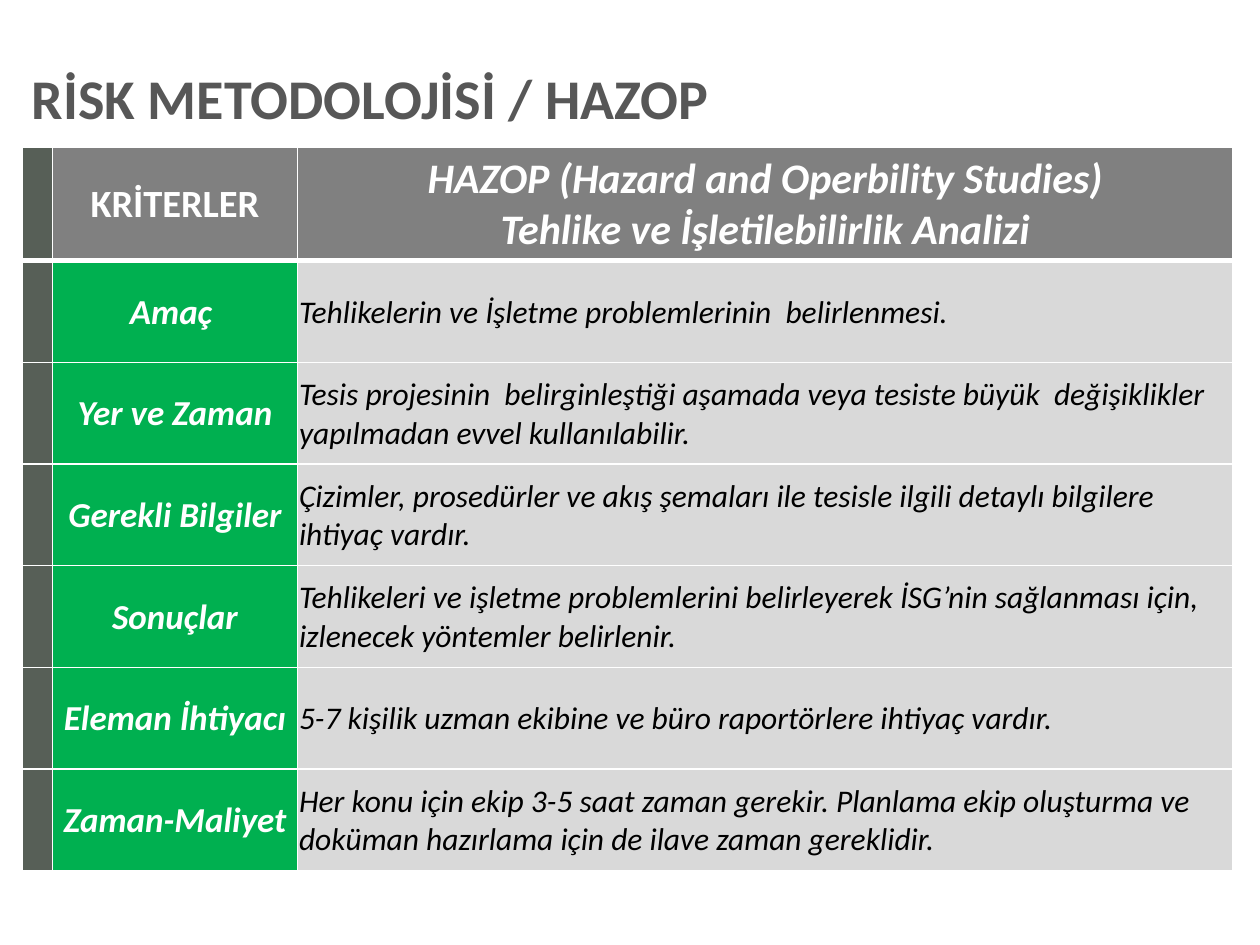
"""Build the HAZOP risk methodology slide with its criteria table."""
import lxml.etree
import pptx
import pptx.dml.color
import pptx.enum.text
import pptx.oxml.ns
import pptx.util

Cm = pptx.util.Cm
ALIGN = pptx.enum.text.PP_ALIGN
MIDDLE = pptx.enum.text.MSO_ANCHOR.MIDDLE
GRAY, WHITE, BLACK = "575757", "FFFFFF", "000000"


def color(hex_string):
    return pptx.dml.color.RGBColor.from_string(hex_string)


def add_run(paragraph, text, size, hex_string, bold=True, italic=False):
    run = paragraph.add_run()
    run.text = text
    run.font.name = "Calibri"
    run.font.size = pptx.util.Pt(size)
    run.font.bold = bold
    run.font.italic = italic
    run.font.color.rgb = color(hex_string)


presentation = pptx.Presentation()
presentation.slide_width = Cm(25.4)
presentation.slide_height = Cm(19.05)
slide = presentation.slides.add_slide(presentation.slide_layouts[6])

title = slide.shapes.add_textbox(Cm(0.64), Cm(1.14), Cm(24.49), Cm(1.8)).text_frame
title.word_wrap = True
title.vertical_anchor = MIDDLE
title.margin_left = title.margin_right = 0
title.paragraphs[0].line_spacing = 0.9
add_run(title.paragraphs[0], "RİSK METODOLOJİSİ / HAZOP", 32, GRAY)

header_lines = ["HAZOP (Hazard and Operbility Studies)", "Tehlike ve İşletilebilirlik Analizi"]
criteria = [
    ("Amaç ", "Tehlikelerin ve İşletme problemlerinin  belirlenmesi."),
    ("Yer ve Zaman", "Tesis projesinin  belirginleştiği aşamada veya tesiste büyük  değişiklikler yapılmadan evvel kullanılabilir."),
    ("Gerekli Bilgiler", "Çizimler, prosedürler ve akış şemaları ile tesisle ilgili detaylı bilgilere ihtiyaç vardır."),
    ("Sonuçlar", "Tehlikeleri ve işletme problemlerini belirleyerek İSG’nin sağlanması için, izlenecek yöntemler belirlenir."),
    ("Eleman İhtiyacı", "5-7 kişilik uzman ekibine ve büro raportörlere ihtiyaç vardır."),
    ("Zaman-Maliyet", "Her konu için ekip 3-5 saat zaman gerekir. Planlama ekip oluşturma ve doküman hazırlama için de ilave zaman gereklidir."),
]

column_widths = [0.59, 4.94, 18.86]
row_heights = [2.26] + [2.05] * len(criteria)
table = slide.shapes.add_table(
    len(row_heights), len(column_widths), Cm(0.45), Cm(2.97),
    Cm(sum(column_widths)), Cm(sum(row_heights))).table
for column, width in zip(table.columns, column_widths):
    column.width = Cm(width)
for row, height in zip(table.rows, row_heights):
    row.height = Cm(height)

header_fills = ["575F57", "808080", "808080"]
body_fills = ["575F57", "00B050", "D9D9D9"]
for row_index, row in enumerate(table.rows):
    fills = body_fills if row_index else header_fills
    for cell, fill in zip(row.cells, fills):
        cell.vertical_anchor = MIDDLE
        properties = cell._tc.get_or_add_tcPr()
        for side in "LRTB":
            thick = (row_index, side) in [(0, "B"), (1, "T")]
            line = lxml.etree.SubElement(
                properties, pptx.oxml.ns.qn(f"a:ln{side}"), w=str(pptx.util.Pt(3 if thick else 1)))
            solid = lxml.etree.SubElement(line, pptx.oxml.ns.qn("a:solidFill"))
            lxml.etree.SubElement(solid, pptx.oxml.ns.qn("a:srgbClr"), val=WHITE)
        cell.fill.solid()
        cell.fill.fore_color.rgb = color(fill)

paragraph = table.cell(0, 1).text_frame.paragraphs[0]
paragraph.alignment = ALIGN.CENTER
add_run(paragraph, "KRİTERLER", 22, WHITE)

header_frame = table.cell(0, 2).text_frame
header_frame.add_paragraph()
for paragraph, text in zip(header_frame.paragraphs, header_lines):
    paragraph.alignment = ALIGN.CENTER
    add_run(paragraph, text, 24, WHITE, italic=True)

for row_index, (criterion, description) in enumerate(criteria, start=1):
    name_cell, description_cell = table.cell(row_index, 1), table.cell(row_index, 2)
    for cell in (name_cell, description_cell):
        cell.margin_left = cell.margin_right = cell.margin_top = Cm(0.03)
        cell.margin_bottom = 0
    paragraph = name_cell.text_frame.paragraphs[0]
    paragraph.alignment = ALIGN.CENTER
    add_run(paragraph, criterion, 20, WHITE, italic=True)
    add_run(description_cell.text_frame.paragraphs[0], description, 18, BLACK, bold=False, italic=True)

presentation.save("out.pptx")
